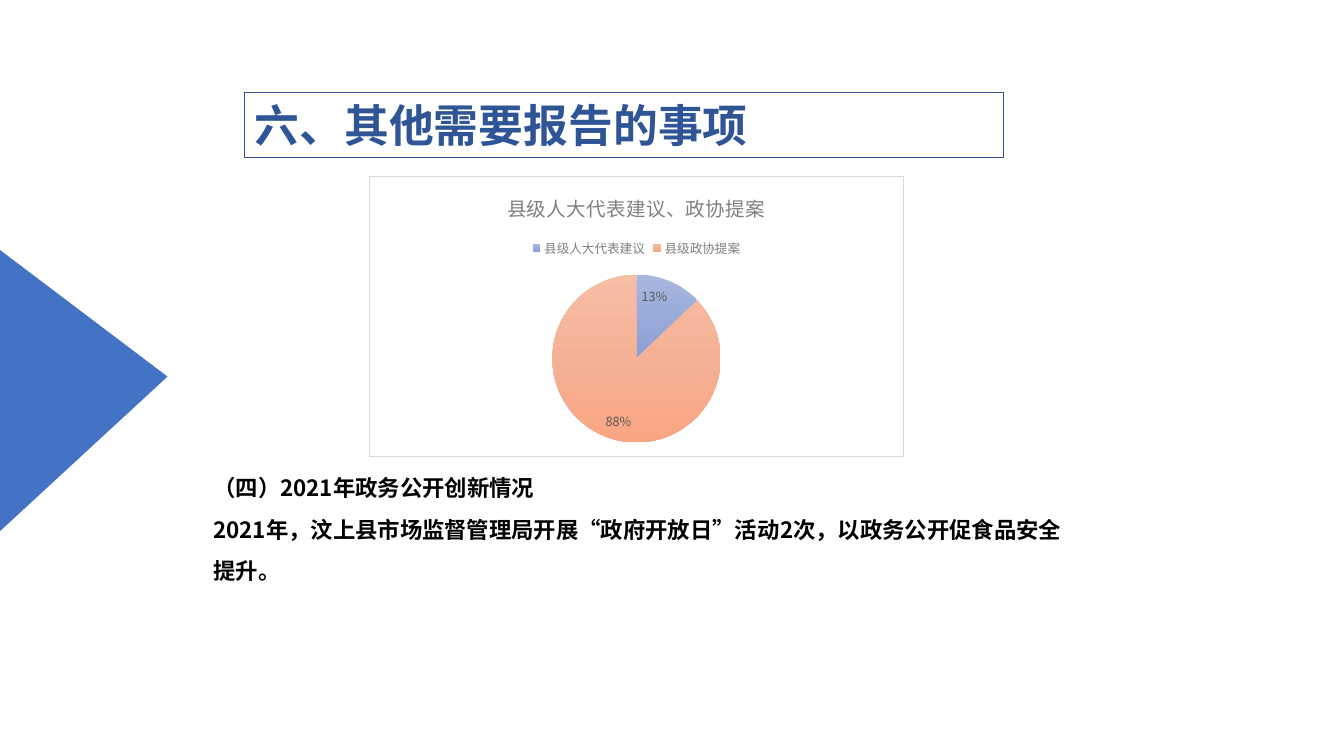
from copy import deepcopy

from lxml import etree
from pptx import Presentation
from pptx.chart.data import CategoryChartData
from pptx.dml.color import RGBColor
from pptx.enum.chart import XL_CHART_TYPE, XL_LABEL_POSITION, XL_LEGEND_POSITION
from pptx.enum.shapes import MSO_SHAPE
from pptx.enum.text import MSO_AUTO_SIZE
from pptx.oxml import parse_xml
from pptx.oxml.ns import nsdecls, qn
from pptx.util import Cm, Pt

PIE = XL_CHART_TYPE.PIE
INSIDE_END = XL_LABEL_POSITION.INSIDE_END
LEGEND_TOP = XL_LEGEND_POSITION.TOP
TRIANGLE = MSO_SHAPE.ISOSCELES_TRIANGLE
GROW = MSO_AUTO_SIZE.SHAPE_TO_FIT_TEXT

FONT = "Noto Sans CJK SC"
BLUE = RGBColor(0x44, 0x72, 0xC4)
NAVY = RGBColor(0x2F, 0x55, 0x97)
BLACK = RGBColor(0, 0, 0)
GRAY = RGBColor(0x80, 0x80, 0x80)
DARK_GRAY = RGBColor(0x59, 0x59, 0x59)
BORDER = RGBColor(0xD9, 0xD9, 0xD9)
WHITE = RGBColor(0xFF, 0xFF, 0xFF)
SLICE_GRADIENTS = [
    [RGBColor(0xA8, 0xB7, 0xDF), RGBColor(0x9A, 0xAB, 0xD9), RGBColor(0x88, 0x9E, 0xD7)],
    [RGBColor(0xF7, 0xBD, 0xA5), RGBColor(0xF5, 0xB1, 0x96), RGBColor(0xF8, 0xA5, 0x82)],
]
PROPOSALS = {"县级人大代表建议": 13, "县级政协提案": 88}
INNOVATION = [
    "（四）2021年政务公开创新情况",
    "2021年，汶上县市场监督管理局开展“政府开放日”活动2次，以政务公开促食品安全提升。",
]


def set_font(font, size, color, bold=False):
    """Apply one text format to Latin and East Asian characters."""
    for name, value in {"name": FONT, "size": Pt(size), "bold": bold}.items():
        setattr(font, name, value)
    font.color.rgb = color
    latin = font._rPr.find(qn("a:latin"))
    ea = etree.Element(qn("a:ea"), typeface=FONT)
    latin.addnext(ea)


def add_text(s, box, lines, size, color, spacing=None):
    """Place bold paragraphs in a wrapping text box and return the box."""
    sp = s.shapes.add_textbox(*box)
    tf = sp.text_frame
    tf.word_wrap = True
    tf.auto_size = GROW
    for i, line in enumerate(lines):
        p = tf.add_paragraph() if i else tf.paragraphs[0]
        p.line_spacing = spacing
        r = p.add_run()
        r.text = line
        set_font(r.font, size, color, True)
    return sp


def add_heading(s, box):
    """Draw the outlined section heading."""
    sp = add_text(s, box, ["六、其他需要报告的事项"], 32, NAVY)
    sp.line.color.rgb = NAVY
    sp.line.width = Pt(0.75)


def add_side_arrow(s, box):
    """Draw the rotated triangle that bleeds off the left edge."""
    sp = s.shapes.add_shape(TRIANGLE, *box)
    sp.adjustments[0] = 0.837
    sp.rotation = 317.3
    sp.shadow.inherit = False
    sp.fill.solid()
    sp.fill.fore_color.rgb = BLUE
    sp.line.fill.background()


def fill_slice(fill, colors):
    """Fill a slice from top to bottom with three evenly spaced colours."""
    fill.gradient()
    fill.gradient_angle = 270
    first = fill.gradient_stops[0]._gs
    first.addnext(deepcopy(first))
    for i, (stop, color) in enumerate(zip(fill.gradient_stops, colors)):
        stop.position = i / 2
        stop.color.rgb = color


def frame_chart(chart):
    """Give the chart area a white fill and a thin border."""
    area = parse_xml(
        f'<c:spPr {nsdecls("c", "a")}>'
        f'<a:solidFill><a:srgbClr val="{WHITE}"/></a:solidFill>'
        f'<a:ln w="{Pt(0.75)}"><a:solidFill><a:srgbClr val="{BORDER}"/></a:solidFill></a:ln>'
        '</c:spPr>'
    )
    chart._chartSpace.find(qn("c:chart")).addnext(area)


def add_proposal_chart(s, box):
    """Draw the pie of proposals with its title, legend and percentages."""
    data = CategoryChartData()
    data.categories = list(PROPOSALS)
    data.add_series("Series 1", list(PROPOSALS.values()))
    chart = s.shapes.add_chart(PIE, *box, data).chart
    set_font(chart.font, 10, BLACK)
    frame_chart(chart)

    chart.has_title = True
    chart.chart_title.include_in_layout = False
    r = chart.chart_title.text_frame.paragraphs[0].add_run()
    r.text = "县级人大代表建议、政协提案"
    set_font(r.font, 14, GRAY)

    chart.has_legend = True
    chart.legend.position = LEGEND_TOP
    chart.legend.include_in_layout = False
    set_font(chart.legend.font, 9, GRAY)

    plot = chart.plots[0]
    plot.vary_by_categories = True
    for i, colors in enumerate(SLICE_GRADIENTS):
        point = plot.series[0].points[i]
        fill_slice(point.format.fill, colors)
        point.format.line.fill.background()

    labels = plot.series[0].data_labels
    formats = {
        "show_value": True,
        "show_percentage": False,
        "number_format": '0"%"',
        "number_format_is_linked": False,
        "position": INSIDE_END,
    }
    for name, value in formats.items():
        setattr(labels, name, value)
    set_font(labels.font, 9, DARK_GRAY)


def main():
    """Build and save the slide."""
    prs = Presentation()
    prs.slide_width, prs.slide_height = Cm(33.87), Cm(19.05)
    s = prs.slides.add_slide(prs.slide_layouts[6])
    add_side_arrow(s, (Cm(-2.61), Cm(6.9), Cm(5.82), Cm(5.26)))
    add_text(s, (Cm(5.13), Cm(11.43), Cm(22.4), Cm(3.43)), INNOVATION, 16, BLACK, Pt(30))
    add_heading(s, (Cm(6.17), Cm(2.34), Cm(19.13), Cm(1.63)))
    add_proposal_chart(s, (Cm(9.3), Cm(4.44), Cm(13.48), Cm(7.07)))
    prs.save("out.pptx")


if __name__ == "__main__":
    main()
